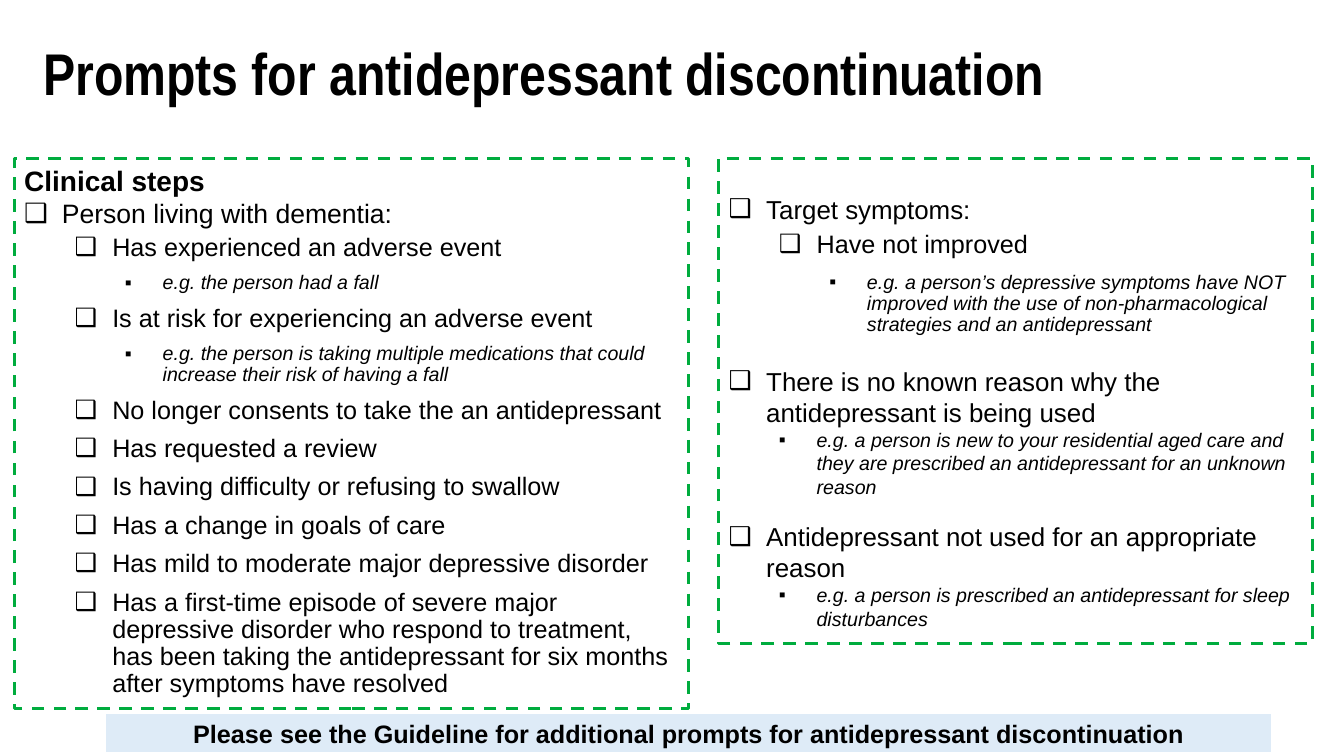
"""Build a slide of prompts for stopping antidepressants."""
from lxml.etree import SubElement
from pptx import Presentation
from pptx.dml.color import RGBColor
from pptx.enum.dml import MSO_LINE
from pptx.enum.shapes import MSO_SHAPE
from pptx.enum.text import MSO_ANCHOR, PP_ALIGN
from pptx.oxml.ns import qn
from pptx.util import Cm, Pt

TITLE = "Prompts for antidepressant discontinuation"
FOOTER = "Please see the Guideline for additional prompts for antidepressant discontinuation"
STEPS = [
    ("head", 0, "Clinical steps"),
    ("main", 0, "Person living with dementia:"),
    ("sub", 1, "Has experienced an adverse event"),
    ("note", 2, "e.g. the person had a fall"),
    ("sub", 1, "Is at risk for experiencing an adverse event"),
    ("note", 2, "e.g. the person is taking multiple medications that could increase their risk of having a fall"),
    ("sub", 1, "No longer consents to take the an antidepressant"),
    ("sub", 1, "Has requested a review"),
    ("sub", 1, "Is having difficulty or refusing to swallow"),
    ("sub", 1, "Has a change in goals of care"),
    ("sub", 1, "Has mild to moderate major depressive disorder"),
    ("sub", 1, "Has a first-time episode of severe major depressive disorder who respond to treatment, "
               "has been taking the antidepressant for six months after symptoms have resolved"),
]
SIGNS = [
    ("lead", 0, "Target symptoms:"),
    ("sub", 1, "Have not improved"),
    ("note", 2, "e.g. a person’s depressive symptoms have NOT improved with the use of "
                "non-pharmacological strategies and an antidepressant"),
    ("next", 0, "There is no known reason why the antidepressant is being used"),
    ("hint", 1, "e.g. a person is new to your residential aged care and they are prescribed "
                "an antidepressant for an unknown reason"),
    ("next", 0, "Antidepressant not used for an appropriate reason"),
    ("hint", 1, "e.g. a person is prescribed an antidepressant for sleep disturbances"),
]
BOXES = [
    (STEPS, (0.36, 3.99, 16.99, 13.87), 0.13, 4),
    (SIGNS, (18.11, 3.99, 14.96, 12.22), 0.88, 5),
]
FONTS = {
    "title": {"size": Pt(42), "bold": True, "name": "Arial Narrow"},
    "foot": {"size": Pt(18), "bold": True},
    "head": {"size": Pt(20), "bold": True},
    "main": {"size": Pt(19)},
    "lead": {"size": Pt(18.5)},
    "next": {"size": Pt(18.5)},
    "sub": {"size": Pt(18)},
    "note": {"size": Pt(14), "italic": True},
    "hint": {"size": Pt(14), "italic": True},
}
MARKS = {"main": "❑", "lead": "❑", "next": "❑", "sub": "❑", "note": "▪", "hint": "▪"}
STEP, HANG = 1.27, 0.95


def color(target, code):
    """Give a fill or font one colour."""
    if hasattr(target, "solid"):
        target.solid()
        target = target.fore_color
    else:
        target = target.color
    target.rgb = RGBColor.from_string(code)


def assign(target, values):
    """Set each named value on the target."""
    for name, value in values.items():
        setattr(target, name, value)


def panel(slide, place, fill=None, line=None, dash=None):
    """Add a plain rectangle and return its text frame."""
    box = slide.shapes.add_shape(MSO_SHAPE.RECTANGLE, *map(Cm, place))
    box.shadow.inherit = False
    if fill:
        color(box.fill, fill)
    else:
        box.fill.background()
    color(box.line, line)
    assign(box.line, {"width": Pt(2.25), "dash_style": dash})
    return box.text_frame


def write(para, kind, text, form):
    """Write one styled paragraph."""
    assign(para, form)
    mark = MARKS.get(kind)
    if mark:
        props = para._p.get_or_add_pPr()
        props.set("marL", str(Cm(HANG + STEP * para.level)))
        props.set("indent", str(-Cm(HANG)))
        SubElement(props, qn("a:buFont")).set("typeface", "Arial")
        SubElement(props, qn("a:buChar")).set("char", mark)
    run = para.add_run()
    run.text = text
    assign(run.font, {"name": "Arial", **FONTS[kind]})
    color(run.font, "000000")


def main():
    """Lay out the slide and save it."""
    deck = Presentation()
    assign(deck, {"slide_width": Cm(33.87), "slide_height": Cm(19.05)})
    slide = deck.slides.add_slide(deck.slide_layouts[6])
    middle = {"word_wrap": True, "vertical_anchor": MSO_ANCHOR.MIDDLE}

    title = slide.shapes.add_textbox(*map(Cm, (0.84, 0.91, 26.7, 2.06))).text_frame
    assign(title, middle)
    write(title.paragraphs[0], "title", TITLE, {"line_spacing": 0.9})

    for rows, place, top, gap in BOXES:
        frame = panel(slide, place, line="00AC3E", dash=MSO_LINE.DASH)
        assign(frame, {"word_wrap": True, "vertical_anchor": MSO_ANCHOR.TOP, "margin_top": Cm(top)})
        tight = {"line_spacing": 0.9, "space_before": Pt(gap), "space_after": Pt(gap)}
        extra = {"sub": tight, "note": tight, "next": {"space_before": Pt(16)}}
        for spot, (kind, level, text) in enumerate(rows):
            para = frame.add_paragraph() if spot else frame.paragraphs[0]
            form = {"level": level, "alignment": PP_ALIGN.LEFT, **extra.get(kind, {})}
            write(para, kind, text, form)

    foot = panel(slide, (2.64, 17.96, 29.44, 1.02), fill="DEEBF7", line="FFFFFF")
    assign(foot, middle)
    write(foot.paragraphs[0], "foot", FOOTER, {"alignment": PP_ALIGN.CENTER})
    deck.save("out.pptx")


if __name__ == "__main__":
    main()
